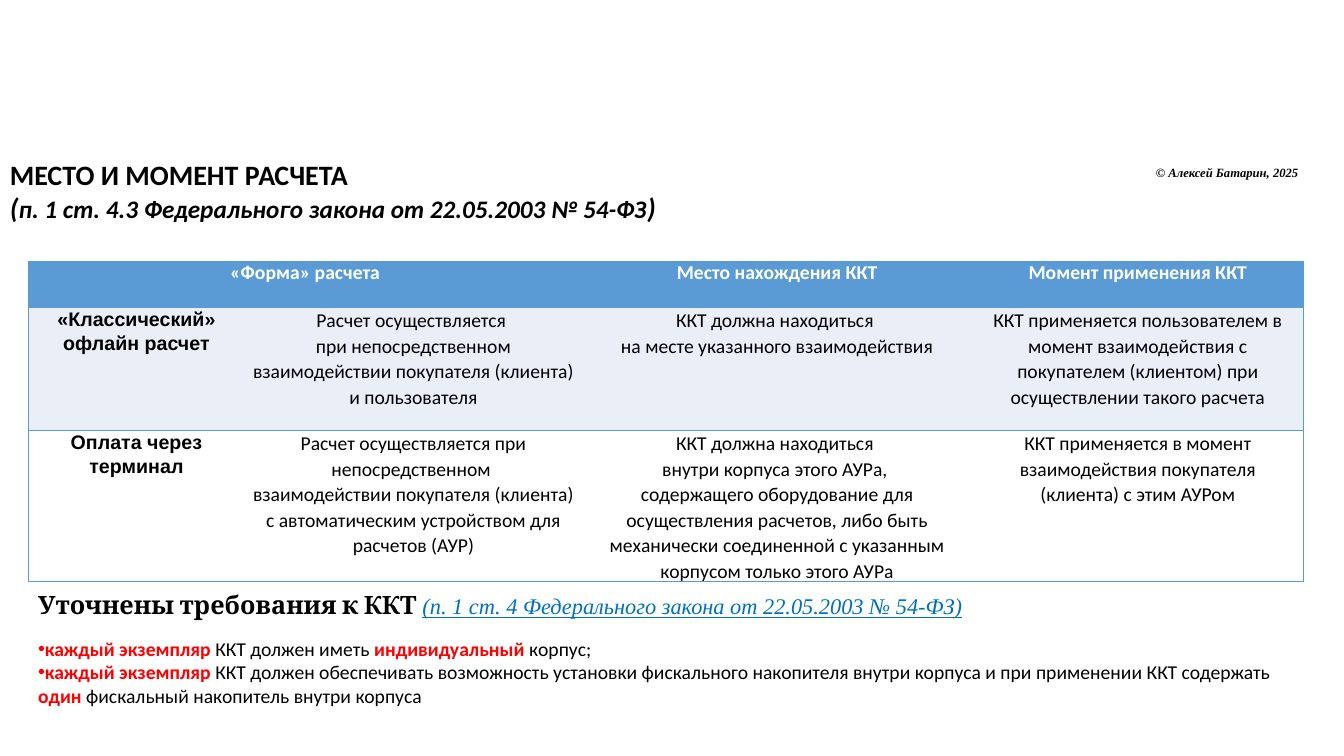
from lxml import etree
from pptx import Presentation
from pptx.dml.color import RGBColor
from pptx.enum.text import PP_ALIGN
from pptx.oxml.ns import qn
from pptx.util import Cm, Pt

CENTER = PP_ALIGN.CENTER
COLORS = {
    "black": "000000",
    "white": "FFFFFF",
    "red": "FF0000",
    "link": "0070C0",
    "accent": "5B9BD5",
    "band": "EAEFF7",
}
COLUMN_WIDTHS = [5.46, 8.5, 9.83, 8.35]
ROW_HEIGHTS = [1.17, 3.1, 3.78]
TABLE_SIZE = 14
ROWS = [
    ["«Форма» расчета", "", "Место нахождения ККТ", "Момент применения ККТ"],
    [
        "«Классический» офлайн расчет",
        "Расчет осуществляется \nпри непосредственном взаимодействии "
        "покупателя (клиента) и пользователя",
        "ККТ должна находиться \nна месте указанного взаимодействия",
        "ККТ применяется пользователем в момент взаимодействия с "
        "покупателем (клиентом) при осуществлении такого расчета",
    ],
    [
        "Оплата через терминал",
        "Расчет осуществляется при непосредственном \nвзаимодействии "
        "покупателя (клиента) с автоматическим устройством для расчетов (АУР)",
        "ККТ должна находиться \nвнутри корпуса этого АУРа, \nсодержащего "
        "оборудование для осуществления расчетов, либо быть механически "
        "соединенной с указанным корпусом только этого АУРа",
        "ККТ применяется в момент взаимодействия покупателя (клиента) "
        "с этим АУРом",
    ],
]
# Plain and red emphasised pieces alternate, starting with an emphasised one.
REQUIREMENTS = [
    ["каждый экземпляр ", "ККТ должен иметь ", "индивидуальный", " корпус;"],
    [
        "каждый экземпляр ",
        "ККТ должен обеспечивать возможность установки фискального "
        "накопителя внутри корпуса и при применении ККТ содержать ",
        "один",
        " фискальный накопитель внутри корпуса",
    ],
]


def color(name):
    return RGBColor.from_string(COLORS[name])


def style(span, size, face="Calibri", ink="black", bold=False, italic=False):
    font = span.font
    font.size = Pt(size)
    font.name = face
    font.bold = bold
    font.italic = italic
    font.color.rgb = color(ink)


def add_span(para, text, size, **look):
    span = para.add_run()
    span.text = text
    style(span, size, **look)
    return span


def add_text(page, left, top, width, height, wrap=False):
    box = page.shapes.add_textbox(Cm(left), Cm(top), Cm(width), Cm(height))
    box.text_frame.word_wrap = wrap
    return box.text_frame


def add_bullet(para):
    properties = para._p.get_or_add_pPr()
    properties.set("marL", "0")
    properties.set("indent", "0")
    etree.SubElement(properties, qn("a:buFont"), typeface="Arial")
    etree.SubElement(properties, qn("a:buChar"), char="•")


def set_borders(cell, visible_sides):
    properties = cell._tc.get_or_add_tcPr()
    for side in "LRTB":
        line = etree.SubElement(properties, qn("a:ln" + side), w=str(Pt(1)))
        if side in visible_sides:
            fill = etree.SubElement(line, qn("a:solidFill"))
            etree.SubElement(fill, qn("a:srgbClr"), val=COLORS["accent"])
        else:
            etree.SubElement(line, qn("a:noFill"))


def fill_cell(cell, text, row, column):
    sides = "TB" + {0: "L", len(COLUMN_WIDTHS) - 1: "R"}.get(column, "")
    set_borders(cell, sides)
    cell.fill.solid()
    cell.fill.fore_color.rgb = color(("accent", "band", "white")[row])
    cell.margin_left = cell.margin_right = Cm(0.16)
    cell.margin_top = cell.margin_bottom = Cm(0)
    para = cell.text_frame.paragraphs[0]
    para.text = text
    para.alignment = CENTER
    if row > 0:
        para.line_spacing = 1.07
    for span in para.runs:
        style(
            span,
            TABLE_SIZE,
            face="Arial" if row > 0 and column == 0 else "Calibri",
            ink="white" if row == 0 else "black",
            bold=row == 0 or column == 0,
        )
    for line_break in para._p.findall(qn("a:br")):
        etree.SubElement(line_break, qn("a:rPr"), sz=str(TABLE_SIZE * 100))


def add_payment_table(page):
    frame = page.shapes.add_table(
        len(ROWS), len(COLUMN_WIDTHS), Cm(0.71), Cm(6.58),
        Cm(sum(COLUMN_WIDTHS)), Cm(sum(ROW_HEIGHTS)),
    )
    table = frame.table
    for column, width in zip(table.columns, COLUMN_WIDTHS):
        column.width = Cm(width)
    for row, height in zip(table.rows, ROW_HEIGHTS):
        row.height = Cm(height)
    table.cell(0, 0).merge(table.cell(0, 1))
    for row, texts in enumerate(ROWS):
        for column, text in enumerate(texts):
            fill_cell(table.cell(row, column), text, row, column)


def add_title(page):
    frame = add_text(page, 0, 3.84, 16.94, 1.96)
    add_span(frame.paragraphs[0], "МЕСТО И МОМЕНТ РАСЧЕТА", 20, bold=True)
    para = frame.add_paragraph()
    law = "п. 1 ст. 4.3 Федерального закона от 22.05.2003 № 54-ФЗ"
    for text, size in (("(", 20), (law, 18), (")", 20)):
        add_span(para, text, size, bold=True, italic=True)


def add_copyright(page):
    frame = add_text(page, 11.37 * 2.54, 4.04, 4.29, 0.64)
    add_span(frame.paragraphs[0], "© Алексей Батарин, 2025", 9,
             face="Times New Roman", bold=True, italic=True)


def add_requirements(page):
    frame = add_text(page, 0.71, 14.73, 32.13, 4.01, wrap=True)
    heading = frame.paragraphs[0]
    add_span(heading, "Уточнены требования к ККТ ", 18, face="Cambria", bold=True)
    law = add_span(heading, "(п. 1 ст. 4 Федерального закона от 22.05.2003 № 54-ФЗ)",
                   16, face="Times New Roman", ink="link", italic=True)
    law.font.underline = True
    heading.space_after = Pt(12)
    for pieces in REQUIREMENTS:
        para = frame.add_paragraph()
        add_bullet(para)
        for index, text in enumerate(pieces):
            strong = index % 2 == 0
            add_span(para, text, 14, ink="red" if strong else "black", bold=strong)


def main():
    deck = Presentation()
    deck.slide_width, deck.slide_height = Cm(33.87), Cm(19.05)
    page = deck.slides.add_slide(deck.slide_layouts[6])
    add_title(page)
    add_copyright(page)
    add_payment_table(page)
    add_requirements(page)
    deck.save("out.pptx")


if __name__ == "__main__":
    main()
